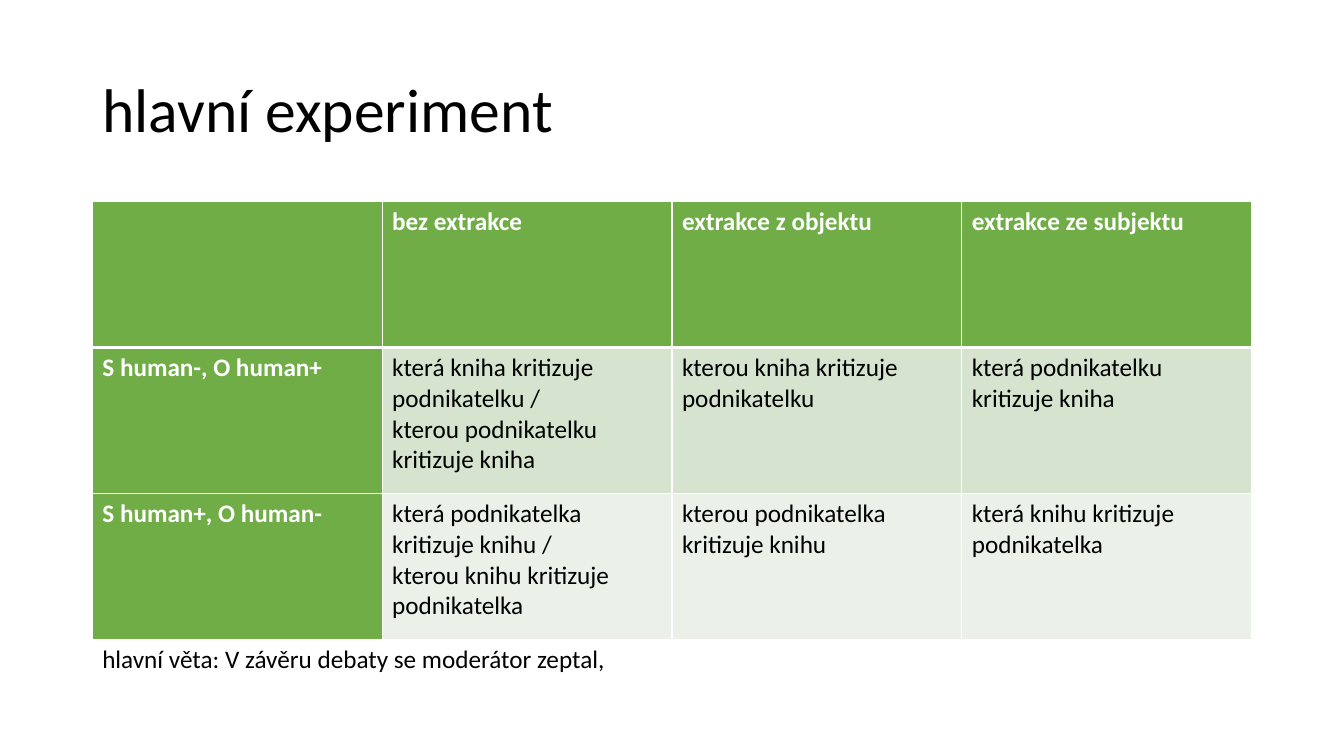
from lxml import etree
from pptx import Presentation
from pptx import util as u
from pptx.dml.color import RGBColor
from pptx.enum import text
from pptx.oxml import ns

# Content
TITLE = "hlavní experiment"
ROWS = [
    ["", "bez extrakce", "extrakce z objektu", "extrakce ze subjektu"],
    ["S human-, O human+",
     "která kniha kritizuje podnikatelku /\nkterou podnikatelku kritizuje kniha",
     "kterou kniha kritizuje podnikatelku",
     "která podnikatelku kritizuje kniha"],
    ["S human+, O human-",
     "která podnikatelka kritizuje knihu /\nkterou knihu kritizuje podnikatelka",
     "kterou podnikatelka kritizuje knihu",
     "která knihu kritizuje podnikatelka"],
]
NOTE = "hlavní věta: V závěru debaty se moderátor zeptal,"

# Colours
WHITE = RGBColor(0xFF, 0xFF, 0xFF)
BLACK = RGBColor(0, 0, 0)
GREEN = RGBColor(0x70, 0xAD, 0x47)
BANDS = [RGBColor(0xD5, 0xE3, 0xCF), RGBColor(0xEB, 0xF1, 0xE9)]

# Layout in px, 96 to the inch
PX = 9525
SLIDE_W, SLIDE_H = 1280, 720
LEFT, WIDTH = 88, 1104
TITLE_TOP, TITLE_H = 38, 139
TABLE_TOP, ROW_H = 192, 139
NOTE_TOP, NOTE_H = 608, 38

TITLE_FONT = {"name": "Calibri", "size": u.Pt(44), "bold": False}
HEAD_FONT = {"name": "Calibri", "size": u.Pt(18), "bold": True}
BODY_FONT = {**HEAD_FONT, "bold": False}


def box(*px):
    return [v * PX for v in px]


def write(tf, content, fmt, color):
    tf.text = content
    for p in tf.paragraphs:
        p.alignment = text.PP_ALIGN.LEFT
        for key, value in fmt.items():
            setattr(p.font, key, value)
        for r in p.runs:
            for key, value in fmt.items():
                setattr(r.font, key, value)
            r.font.color.rgb = color


def set_borders(cell, widths):
    tcPr = cell._tc.get_or_add_tcPr()
    for i, (side, points) in enumerate(widths.items()):
        ln = etree.Element(ns.qn(f"a:ln{side}"), w=str(u.Pt(points)))
        fill = etree.SubElement(ln, ns.qn("a:solidFill"))
        etree.SubElement(fill, ns.qn("a:srgbClr"), val=str(WHITE))
        tcPr.insert(i, ln)


def main():
    prs = Presentation()
    prs.slide_width, prs.slide_height = box(SLIDE_W, SLIDE_H)
    s = prs.slides.add_slide(prs.slide_layouts[5])

    # Title
    sp = s.shapes.title
    sp.left, sp.top, sp.width, sp.height = box(LEFT, TITLE_TOP, WIDTH, TITLE_H)
    tf = sp.text_frame
    write(tf, TITLE, TITLE_FONT, BLACK)
    tf.auto_size = text.MSO_AUTO_SIZE.NONE
    tf.vertical_anchor = text.MSO_ANCHOR.MIDDLE
    tf.paragraphs[0].line_spacing = 0.9

    # Table: green header row and first column, banded body
    n_rows, n_cols = len(ROWS), len(ROWS[0])
    table = s.shapes.add_table(
        n_rows, n_cols, *box(LEFT, TABLE_TOP, WIDTH, ROW_H * n_rows)).table
    for col in table.columns:
        col.width = WIDTH * PX // n_cols
    for i, row in enumerate(ROWS):
        table.rows[i].height = ROW_H * PX
        for j, content in enumerate(row):
            cell = table.cell(i, j)
            head = i == 0 or j == 0
            write(cell.text_frame, content, HEAD_FONT if head else BODY_FONT,
                  WHITE if head else BLACK)
            cell.fill.solid()
            cell.fill.fore_color.rgb = GREEN if head else BANDS[i - 1]
            set_borders(cell, {"L": 1, "R": 1, "T": 3 if i == 1 else 1,
                               "B": 3 if i == 0 else 1})

    # Main clause under the table
    tf = s.shapes.add_textbox(*box(LEFT, NOTE_TOP, WIDTH, NOTE_H)).text_frame
    tf.word_wrap = True
    tf.auto_size = text.MSO_AUTO_SIZE.SHAPE_TO_FIT_TEXT
    write(tf, NOTE, BODY_FONT, BLACK)

    prs.save("out.pptx")


if __name__ == "__main__":
    main()
